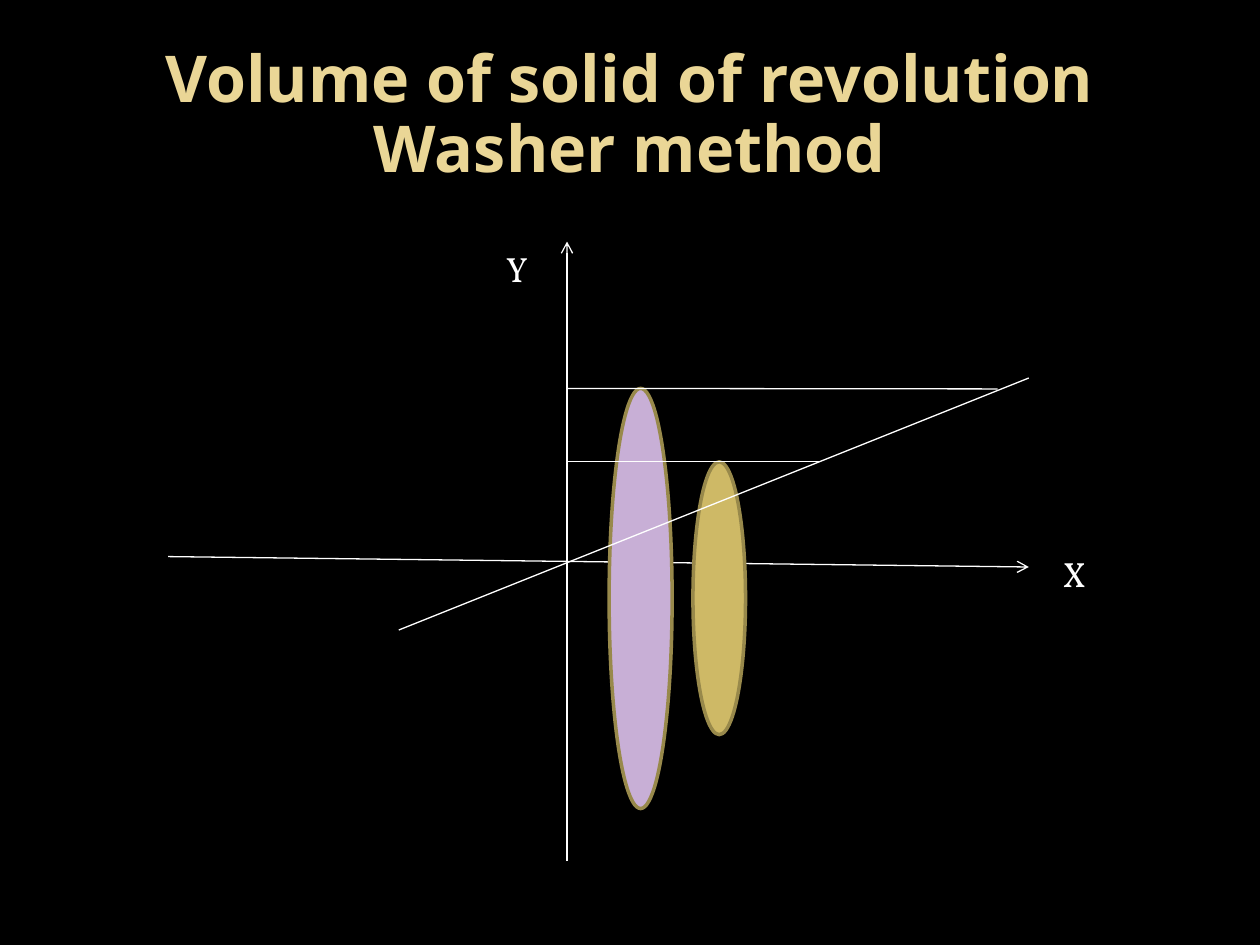
"""Build a slide sketching the washer method for a solid of revolution."""
from dataclasses import dataclass

from lxml import etree
from pptx import Presentation
from pptx.dml.color import RGBColor
from pptx.enum.shapes import MSO_CONNECTOR, MSO_SHAPE
from pptx.enum.text import MSO_ANCHOR, MSO_AUTO_SIZE, PP_ALIGN
from pptx.oxml.ns import qn
from pptx.slide import Slide
from pptx.util import Cm, Pt

STRAIGHT = MSO_CONNECTOR.STRAIGHT
ELLIPSE = MSO_SHAPE.OVAL
MIDDLE = MSO_ANCHOR.MIDDLE
NO_AUTOFIT = MSO_AUTO_SIZE.NONE
GROW_TO_TEXT = MSO_AUTO_SIZE.SHAPE_TO_FIT_TEXT
CENTER = PP_ALIGN.CENTER

BLACK = RGBColor(0x00, 0x00, 0x00)
WHITE = RGBColor(0xFF, 0xFF, 0xFF)
PALE_GOLD = RGBColor(0xEA, 0xD6, 0x96)
GOLD = RGBColor(0xCE, 0xB9, 0x66)
DARK_GOLD = RGBColor(0x98, 0x89, 0x4B)
LILAC = RGBColor(0xC8, 0xAF, 0xD6)

TITLE_FONT = {"name": "Noto Sans", "size": Pt(36.9), "bold": True}
LABEL_FONT = {"name": "Vollkorn", "size": Pt(20)}
TITLE_BOX = {"left": Cm(1.27), "top": Cm(0.76), "width": Cm(22.86), "height": Cm(3.18)}
TITLE_FRAME = {"word_wrap": True, "auto_size": NO_AUTOFIT, "vertical_anchor": MIDDLE}
LABEL_FRAME = {"word_wrap": True, "auto_size": GROW_TO_TEXT}

ORIGIN_X = 11.43
OUTER_TOP = 7.83
INNER_TOP = 9.31


@dataclass(frozen=True)
class Segment:
    start: tuple[float, float]
    end: tuple[float, float]
    arrow: bool = False


@dataclass(frozen=True)
class Disc:
    left: float
    top: float
    width: float
    height: float
    fill: RGBColor


@dataclass(frozen=True)
class Label:
    text: str
    left: float
    top: float
    width: float


AXES = (
    Segment((3.39, 11.22), (20.74, 11.43), arrow=True),
    Segment((ORIGIN_X, 17.36), (ORIGIN_X, 4.87), arrow=True),
)
DISCS = (
    Disc(12.28, OUTER_TOP, 1.27, 8.47, LILAC),
    Disc(13.97, INNER_TOP, 1.06, 5.5, GOLD),
)
CURVE_AND_RADII = (
    Segment((8.04, 12.7), (20.74, 7.62)),
    Segment((ORIGIN_X, OUTER_TOP), (20.11, 7.84)),
    Segment((ORIGIN_X, INNER_TOP), (16.51, INNER_TOP)),
)
LABELS = (Label("Y", 9.95, 4.87, 0.85), Label("X", 21.17, 11.01, 1.69))


def apply_format(target: object, values: dict) -> None:
    """Set every named value on the target."""
    for name, value in values.items():
        setattr(target, name, value)


def draw_title(slide: Slide, text: str) -> None:
    """Place and format the title placeholder."""
    title = slide.shapes.title
    apply_format(title, TITLE_BOX)
    apply_format(title.text_frame, TITLE_FRAME)
    title.text_frame.text = text
    paragraph = title.text_frame.paragraphs[0]
    apply_format(paragraph, {"alignment": CENTER, "line_spacing": 0.9})
    font = paragraph.runs[0].font
    apply_format(font, TITLE_FONT)
    font.color.rgb = PALE_GOLD


def draw_segment(slide: Slide, segment: Segment) -> None:
    """Draw a thin white line, with an arrowhead on an axis."""
    points = (Cm(value) for value in (*segment.start, *segment.end))
    connector = slide.shapes.add_connector(STRAIGHT, *points)
    connector.line.color.rgb = WHITE
    connector.line.width = Pt(0.75)
    properties = connector._element.spPr
    if segment.arrow:
        etree.SubElement(properties.find(qn("a:ln")), qn("a:tailEnd"), type="arrow")
    etree.SubElement(properties, qn("a:effectLst"))


def draw_disc(slide: Slide, disc: Disc) -> None:
    """Draw a disc seen from the side as a narrow ellipse."""
    box = (Cm(value) for value in (disc.left, disc.top, disc.width, disc.height))
    shape = slide.shapes.add_shape(ELLIPSE, *box)
    shape.shadow.inherit = False
    shape.fill.solid()
    shape.fill.fore_color.rgb = disc.fill
    shape.line.color.rgb = DARK_GOLD
    shape.line.width = Pt(2)


def draw_label(slide: Slide, label: Label) -> None:
    """Write the name of an axis."""
    box = (Cm(value) for value in (label.left, label.top, label.width, 1.12))
    frame = slide.shapes.add_textbox(*box).text_frame
    apply_format(frame, LABEL_FRAME)
    frame.text = label.text
    font = frame.paragraphs[0].runs[0].font
    apply_format(font, LABEL_FONT)
    font.color.rgb = WHITE


def main() -> None:
    """Assemble and save the presentation."""
    presentation = Presentation()
    presentation.slide_width = Cm(25.4)
    presentation.slide_height = Cm(19.05)
    slide = presentation.slides.add_slide(presentation.slide_layouts.get_by_name("Title Only"))
    slide.background.fill.solid()
    slide.background.fill.fore_color.rgb = BLACK

    draw_title(slide, "Volume of solid of revolution Washer method")
    for axis in AXES:
        draw_segment(slide, axis)
    for disc in DISCS:
        draw_disc(slide, disc)
    for segment in CURVE_AND_RADII:
        draw_segment(slide, segment)
    for label in LABELS:
        draw_label(slide, label)
    presentation.save("out.pptx")


if __name__ == "__main__":
    main()
